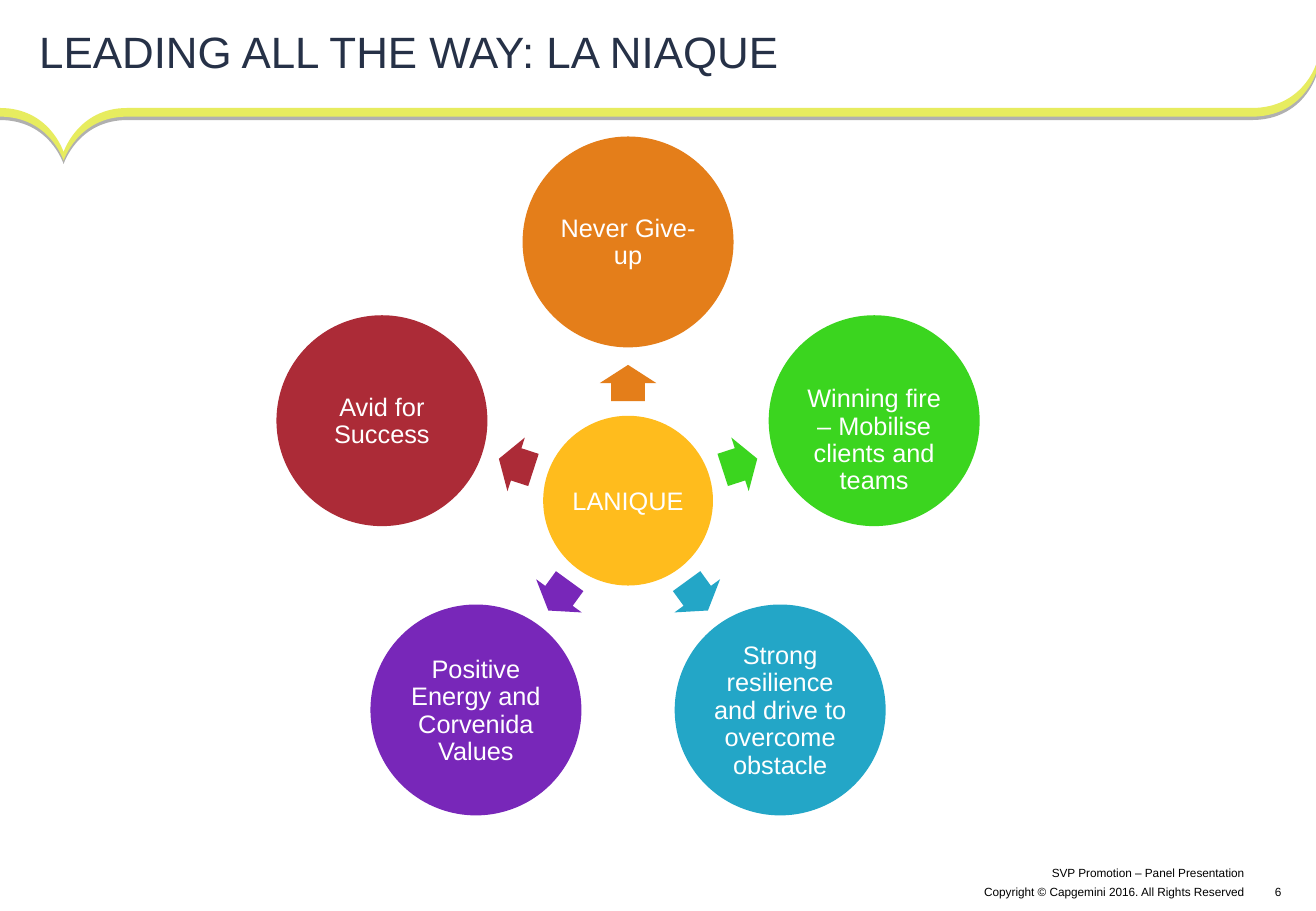
from math import cos, radians, sin

from lxml.etree import SubElement
from pptx import Presentation
from pptx.dml.color import RGBColor
from pptx.enum.shapes import MSO_SHAPE
from pptx.enum.text import MSO_ANCHOR, MSO_AUTO_SIZE, PP_ALIGN
from pptx.oxml.ns import qn
from pptx.util import Cm, Pt

WHITE = RGBColor(0xFF, 0xFF, 0xFF)
BLACK = RGBColor(0x00, 0x00, 0x00)
NAVY = RGBColor(0x26, 0x31, 0x47)
LIME = RGBColor(0xE7, 0xEC, 0x5F)
AMBER = RGBColor(0xFF, 0xBC, 0x1D)
ORANGE = RGBColor(0xE4, 0x7E, 0x1A)
GREEN = RGBColor(0x3B, 0xD5, 0x1F)
TEAL = RGBColor(0x23, 0xA6, 0xC7)
PURPLE = RGBColor(0x78, 0x27, 0xB9)
RED = RGBColor(0xAC, 0x2B, 0x37)

SLIDE_WIDTH, SLIDE_HEIGHT = 27.51, 19.05
HUB_X, HUB_Y, HUB_SIZE = 13.13, 10.47, 3.55
CIRCLE_SIZE, CIRCLE_ORBIT = 4.41, 5.41
ARROW_WIDTH, ARROW_HEIGHT, ARROW_ORBIT = 0.76, 1.18, 2.46

# Clockwise from the top
QUALITIES = [
    ("Never Give-up", ORANGE, MSO_ANCHOR.MIDDLE),
    ("Winning fire – Mobilise clients and teams", GREEN, MSO_ANCHOR.BOTTOM),
    ("Strong resilience and drive to overcome obstacle", TEAL, MSO_ANCHOR.MIDDLE),
    ("Positive Energy and Corvenida Values", PURPLE, MSO_ANCHOR.MIDDLE),
    ("Avid for Success", RED, MSO_ANCHOR.MIDDLE),
]


def set_values(target, values):
    for name, value in values.items():
        setattr(target, name, value)


def write_text(shape, text, size, color, alignment, anchor, margins, line_spacing=1.0):
    """Margins are left, top, right and bottom, in centimetres."""
    frame = shape.text_frame
    left, top, right, bottom = margins
    set_values(frame, {
        "text": text,
        "word_wrap": True,
        "auto_size": MSO_AUTO_SIZE.NONE,
        "vertical_anchor": anchor,
        "margin_left": Cm(left),
        "margin_top": Cm(top),
        "margin_right": Cm(right),
        "margin_bottom": Cm(bottom),
    })
    paragraph = frame.paragraphs[0]
    set_values(paragraph, {"alignment": alignment, "line_spacing": line_spacing})
    set_values(paragraph.font, {"name": "Arial", "size": Pt(size)})
    paragraph.font.color.rgb = color


def paint(shape, color):
    shape.shadow.inherit = False
    shape.fill.solid()
    shape.fill.fore_color.rgb = color
    shape.line.fill.background()


def add_centred_shape(slide, kind, x, y, width, height, color):
    shape = slide.shapes.add_shape(
        kind, Cm(x - width / 2), Cm(y - height / 2), Cm(width), Cm(height))
    paint(shape, color)
    return shape


def add_circle(slide, x, y, size, color, text, anchor):
    circle = add_centred_shape(slide, MSO_SHAPE.OVAL, x, y, size, size, color)
    write_text(circle, text, 15, WHITE, PP_ALIGN.CENTER, anchor,
               [0.05, 0.05, 0.05, 0], 0.9)


def add_arrow(slide, x, y, angle, color):
    arrow = add_centred_shape(
        slide, MSO_SHAPE.RIGHT_ARROW, x, y, ARROW_WIDTH, ARROW_HEIGHT, color)
    arrow.adjustments[0] = 0.6
    arrow.adjustments[1] = 0.5
    arrow.rotation = angle % 360


def around_hub(angle, orbit):
    return (HUB_X + orbit * cos(radians(angle)), HUB_Y + orbit * sin(radians(angle)))


def bend_segments(freeform):
    """Turn every three straight segments into one Bézier curve."""
    segments = list(freeform.element.spPr.iter(qn("a:lnTo")))
    for first, second, third in zip(*[iter(segments)] * 3):
        first.tag = qn("a:cubicBezTo")
        for segment in (second, third):
            first.append(segment[0])
            segment.getparent().remove(segment)


def add_shadow(shape, distance, opacity):
    effects = shape.element.spPr.find(qn("a:effectLst"))
    shadow = SubElement(effects, qn("a:outerShdw"), blurRad="0",
                        dist=str(distance), dir="5400000", rotWithShape="0")
    shade = SubElement(shadow, qn("a:srgbClr"), val=str(BLACK))
    SubElement(shade, qn("a:alpha"), val=str(opacity * 1000))


def add_ribbon(slide):
    level, thickness = 2.26, 0.18
    notch, tip = (1.33, 3.18), (SLIDE_WIDTH, 1.35)
    notch_end, tip_start = (2.66, level), (26.17, level)
    # Each curve is two control points and an end point
    upper_edge = [
        (0, level),
        (1.04, level), notch, notch,
        notch, (1.63, level), notch_end,
        notch_end, tip_start, tip_start,
        (27.23, level), tip, tip,
    ]
    lower_edge = [(x, y + thickness) for x, y in reversed(upper_edge)]
    right_end = [upper_edge[-1], lower_edge[0]]
    points = [(Cm(x), Cm(y)) for x, y in upper_edge + right_end + lower_edge]
    builder = slide.shapes.build_freeform(*points[0])
    builder.add_line_segments(points[1:], close=True)
    ribbon = builder.convert_to_shape()
    bend_segments(ribbon)
    paint(ribbon, LIME)
    add_shadow(ribbon, Pt(2), 31)


def add_title(slide, text):
    title = slide.shapes.title
    set_values(title, {"left": Cm(0), "top": Cm(0),
                       "width": Cm(SLIDE_WIDTH), "height": Cm(2.13)})
    write_text(title, text, 26, NAVY, PP_ALIGN.LEFT, MSO_ANCHOR.MIDDLE,
               [0.82, 0.1, 0.46, 0.1])


def add_footer_text(slide, text, left, top, width, height, alignment, anchor, margin):
    box = slide.shapes.add_textbox(Cm(left), Cm(top), Cm(width), Cm(height))
    write_text(box, text, 7, BLACK, alignment, anchor, [margin] * 4)


def add_footer(slide):
    right, bottom = PP_ALIGN.RIGHT, MSO_ANCHOR.BOTTOM
    add_footer_text(slide, "SVP Promotion – Panel Presentation",
                    16.76, 17.84, 9.35, 0.66, right, bottom, 0.1)
    add_footer_text(slide, "Copyright © Capgemini 2016. All Rights Reserved",
                    18.72, 18.39, 7.39, 0.51, right, bottom, 0.1)
    add_footer_text(slide, "6", 26.57, 18.5, 0.3, 0.3,
                    PP_ALIGN.CENTER, MSO_ANCHOR.MIDDLE, 0)


def add_qualities(slide):
    add_circle(slide, HUB_X, HUB_Y, HUB_SIZE, AMBER, "LANIQUE", MSO_ANCHOR.MIDDLE)
    for index, (text, color, anchor) in enumerate(QUALITIES):
        angle = -90 + index * 360 / len(QUALITIES)
        add_arrow(slide, *around_hub(angle, ARROW_ORBIT), angle, color)
        add_circle(slide, *around_hub(angle, CIRCLE_ORBIT), CIRCLE_SIZE,
                   color, text, anchor)


def main():
    presentation = Presentation()
    presentation.slide_width = Cm(SLIDE_WIDTH)
    presentation.slide_height = Cm(SLIDE_HEIGHT)
    slide = presentation.slides.add_slide(presentation.slide_layouts[5])
    add_ribbon(slide)
    add_title(slide, "LEADING ALL THE WAY: LA NIAQUE")
    add_qualities(slide)
    add_footer(slide)
    presentation.save("out.pptx")


if __name__ == "__main__":
    main()
